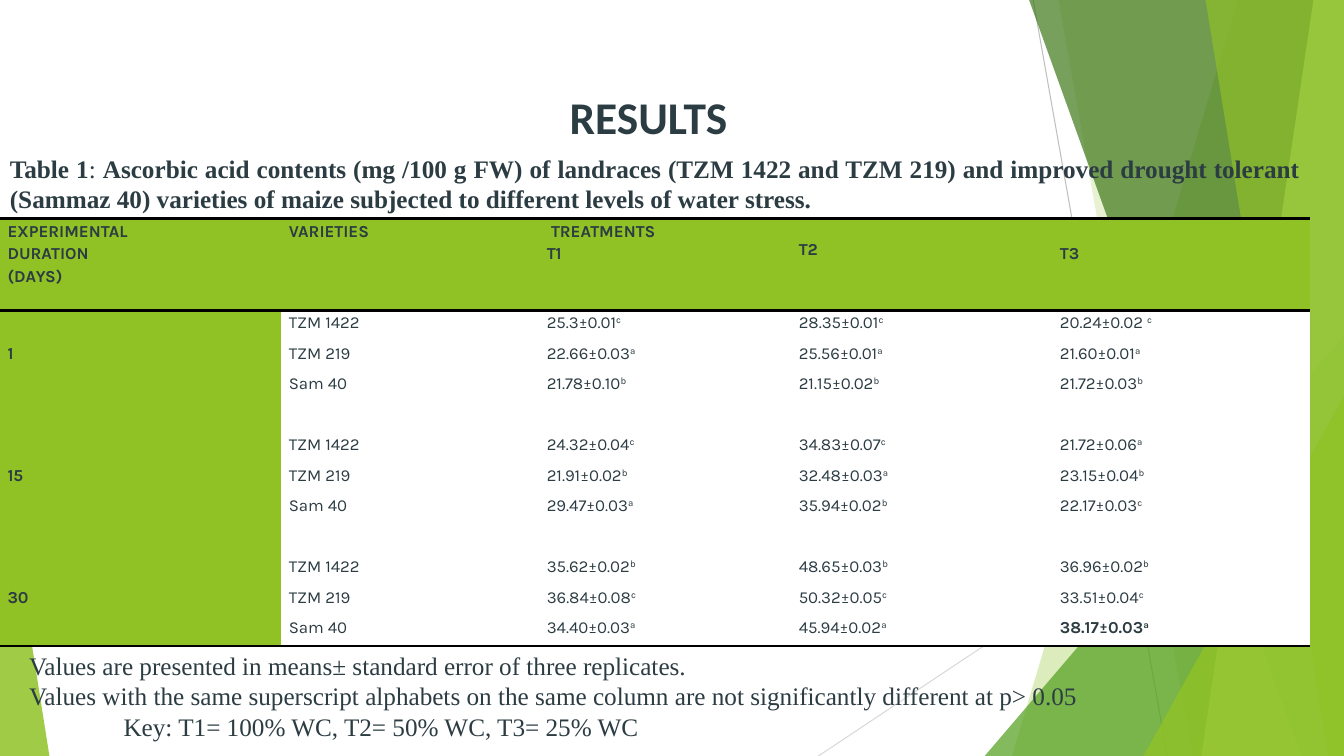
from lxml import etree
from pptx import Presentation
from pptx.dml.color import RGBColor
from pptx.enum import shapes, text
from pptx.oxml.ns import qn
from pptx.util import Pt

INK, GREEN, WHITE, BLACK = "2C3C43", "90C226", "FFFFFF", "000000"
SERIF = "Times New Roman"
WIDTH, HEIGHT = 960, 540
NO_GRID_STYLE = "{2D5ABB26-0587-4C30-8999-92F81FD0307C}"

SIGHT_LINES = [((738, 0), (833.8, 540), "BFBFBF"), ((960, 290.2), (584.6, 540), "D9D9D9")]
# top left x, bottom left x, colour, opacity; all reach the right edge
BACK_SHARDS = [(884.2, 722.9, GREEN, 30), (756, 851.8, GREEN, 20)]
FRONT_SHARDS = [(735.1, 929.5, "3F7819", 70), (938.2, 858.2, "C0E474", 70),
                (861.1, 949, GREEN, 65)]

HEADINGS = [  # lines, top margin
    (["EXPERIMENTAL", "DURATION", "(DAYS)"], 0),
    (["VARIETIES"], 0),
    (["\N{NO-BREAK SPACE}TREATMENTS", "T1"], 0),
    (["T2"], 13),
    (["T3"], 16),
]
VARIETIES = ["TZM 1422", "TZM 219", "Sam 40"]
# The last letter of each value is its significance superscript.
RESULTS = {
    "1": [["25.3±0.01c", "28.35±0.01c", "20.24±0.02 c"],
          ["22.66±0.03a", "25.56±0.01a", "21.60±0.01a"],
          ["21.78±0.10b", "21.15±0.02b", "21.72±0.03b"]],
    "15": [["24.32±0.04c", "34.83±0.07c", "21.72±0.06a"],
           ["21.91±0.02b", "32.48±0.03a", "23.15±0.04b"],
           ["29.47±0.03a", "35.94±0.02b", "22.17±0.03c"]],
    "30": [["35.62±0.02b", "48.65±0.03b", "36.96±0.02b"],
           ["36.84±0.08c", "50.32±0.05c", "33.51±0.04c"],
           ["34.40±0.03a", "45.94±0.02a", "38.17±0.03a"]],
}
BEST_VALUE = "38.17±0.03a"
COLUMN_WIDTHS = [200.9, 184.3, 180, 186.5, 184.3]
HEADER_HEIGHT, ROW_HEIGHT = 65.5, 21.8


def rgb(color):
    return RGBColor.from_string(color)


def add_run(paragraph, words, size, font, bold=False, superscript=False):
    run = paragraph.add_run()
    run.text = words
    run.font.size, run.font.name, run.font.bold = Pt(size), font, bold
    run.font.color.rgb = rgb(INK)
    if superscript:
        run.font._element.set("baseline", "30000")


def add_sight_line(slide, start, end, color):
    line = slide.shapes.add_connector(
        shapes.MSO_CONNECTOR.STRAIGHT, *(Pt(v) for v in start + end))
    line.line.color.rgb = rgb(color)
    line.line.width = Pt(0.75)
    etree.SubElement(line._element.spPr, qn("a:effectLst"))


def paint(shape, color, opacity):
    shape.shadow.inherit = False
    shape.line.fill.background()
    shape.fill.solid()
    shape.fill.fore_color.rgb = rgb(color)
    tint = shape._element.spPr.find(qn("a:solidFill"))[0]
    etree.SubElement(tint, qn("a:alpha"), val=str(opacity * 1000))


def add_shard(slide, top_left, bottom_left, color, opacity):
    outline = slide.shapes.build_freeform(Pt(top_left), 0)
    corners = [(WIDTH, 0), (WIDTH, HEIGHT), (bottom_left, HEIGHT)]
    outline.add_line_segments([(Pt(x), Pt(y)) for x, y in corners], close=True)
    paint(outline.convert_to_shape(), color, opacity)


def add_corner(slide, left, top, width, apex, color, opacity):
    """Triangle standing on the bottom edge; apex is 0 for left, 1 for right."""
    corner = slide.shapes.add_shape(
        shapes.MSO_SHAPE.ISOSCELES_TRIANGLE, Pt(left), Pt(top), Pt(width), Pt(HEIGHT - top))
    corner.adjustments[0] = apex
    paint(corner, color, opacity)


def add_backdrop(slide):
    for sight_line in SIGHT_LINES:
        add_sight_line(slide, *sight_line)
    for shard in BACK_SHARDS:
        add_shard(slide, *shard)
    add_corner(slide, 703.4, 239.8, 256.6, 1, "54A021", 72)
    for shard in FRONT_SHARDS:
        add_shard(slide, *shard)
    add_corner(slide, 816.7, 283, 143.3, 1, GREEN, 80)
    add_corner(slide, 0, 316.1, 35.3, 0, GREEN, 85)


def add_text(slide, left, top, width, height, paragraphs, size, font, align):
    """Each paragraph is a list of (words, bold) runs."""
    box = slide.shapes.add_textbox(Pt(left), Pt(top), Pt(width), Pt(height))
    frame = box.text_frame
    frame.word_wrap = True
    for i, runs in enumerate(paragraphs):
        paragraph = frame.add_paragraph() if i else frame.paragraphs[0]
        paragraph.alignment = align
        for words, bold in runs:
            add_run(paragraph, words, size, font, bold)
    return frame.paragraphs


def style_cell(cell, fill, borders=(), top_margin=0):
    cell.margin_left = cell.margin_right = Pt(5.4)
    cell.margin_top, cell.margin_bottom = Pt(top_margin), 0
    cell.text_frame.paragraphs[0].font.size = Pt(12)
    props = cell._tc.get_or_add_tcPr()
    for side in borders:
        border = etree.SubElement(props, qn(f"a:{side}"), w=str(Pt(2)))
        solid = etree.SubElement(border, qn("a:solidFill"))
        etree.SubElement(solid, qn("a:srgbClr"), val=BLACK)
    cell.fill.solid()
    cell.fill.fore_color.rgb = rgb(fill)


def write_cell(cell, lines, bold=False, superscript=""):
    for i, words in enumerate(lines):
        paragraph = cell.text_frame.add_paragraph() if i else cell.text_frame.paragraphs[0]
        paragraph.alignment = text.PP_ALIGN.JUSTIFY
        paragraph.line_spacing = 1.15
        add_run(paragraph, words, 12, "Karla", bold)
    if superscript:
        add_run(paragraph, superscript, 12, "Karla", bold, superscript=True)


def body_rows():
    """Rows of five texts: three per duration, with an empty row between durations."""
    rows = []
    for duration, groups in RESULTS.items():
        if rows:
            rows.append([""] * 5)
        for label, variety, values in zip(["", duration, ""], VARIETIES, groups):
            rows.append([label, variety] + values)
    return rows


def add_results_table(slide):
    rows = body_rows()
    table_frame = slide.shapes.add_table(
        len(rows) + 1, len(COLUMN_WIDTHS), 0, Pt(156.2), Pt(sum(COLUMN_WIDTHS)),
        Pt(HEADER_HEIGHT + ROW_HEIGHT * len(rows)))
    table = table_frame.table
    table.first_row = table.horz_banding = False
    table._tbl.tblPr.find(qn("a:tableStyleId")).text = NO_GRID_STYLE
    for column, width in zip(table.columns, COLUMN_WIDTHS):
        column.width = Pt(width)
    for i, row in enumerate(table.rows):
        row.height = Pt(ROW_HEIGHT if i else HEADER_HEIGHT)

    for c, (lines, top_margin) in enumerate(HEADINGS):
        style_cell(table.cell(0, c), GREEN, ["lnT", "lnB"], top_margin)
        write_cell(table.cell(0, c), lines, bold=True)
    for r, row in enumerate(rows, start=1):
        for c, entry in enumerate(row):
            cell = table.cell(r, c)
            style_cell(cell, WHITE if c else GREEN, ["lnB"] if r == len(rows) else [])
            if entry and c < 2:
                write_cell(cell, [entry], bold=c == 0)
            elif entry:
                write_cell(cell, [entry[:-1]], entry == BEST_VALUE, entry[-1])


def main():
    deck = Presentation()
    deck.slide_width, deck.slide_height = Pt(WIDTH), Pt(HEIGHT)
    slide = deck.slides.add_slide(deck.slide_layouts[6])
    add_backdrop(slide)
    add_text(slide, 0, 59.8, 926.6, 45.4, [[("RESULTS", True)]], 32.4, "Calibri",
             text.PP_ALIGN.CENTER)
    add_results_table(slide)
    caption = [("Table 1", True), (": ", False),
               ("Ascorbic acid contents (mg /100 g FW) of landraces (TZM 1422 and TZM 219) "
                "and improved drought tolerant (Sammaz 40) varieties of maize subjected to "
                "different levels of water stress.", True)]
    add_text(slide, 0, 105.8, 936, 51, [caption], 18, SERIF, text.PP_ALIGN.JUSTIFY)
    notes = ["Values are presented in means± standard error of three replicates.",
             "Values with the same superscript alphabets on the same column are not "
             "significantly different at p> 0.05",
             "Key: T1= 100% WC, T2= 50% WC, T3= 25% WC"]
    first, _, key = add_text(slide, 13.7, 457.9, 769.7, 76.3, [[(n, False)] for n in notes],
                             18, SERIF, text.PP_ALIGN.LEFT)
    first.line_spacing = 1.15
    key._p.get_or_add_pPr().set("marL", str(Pt(67.5)))
    deck.save("out.pptx")


if __name__ == "__main__":
    main()
